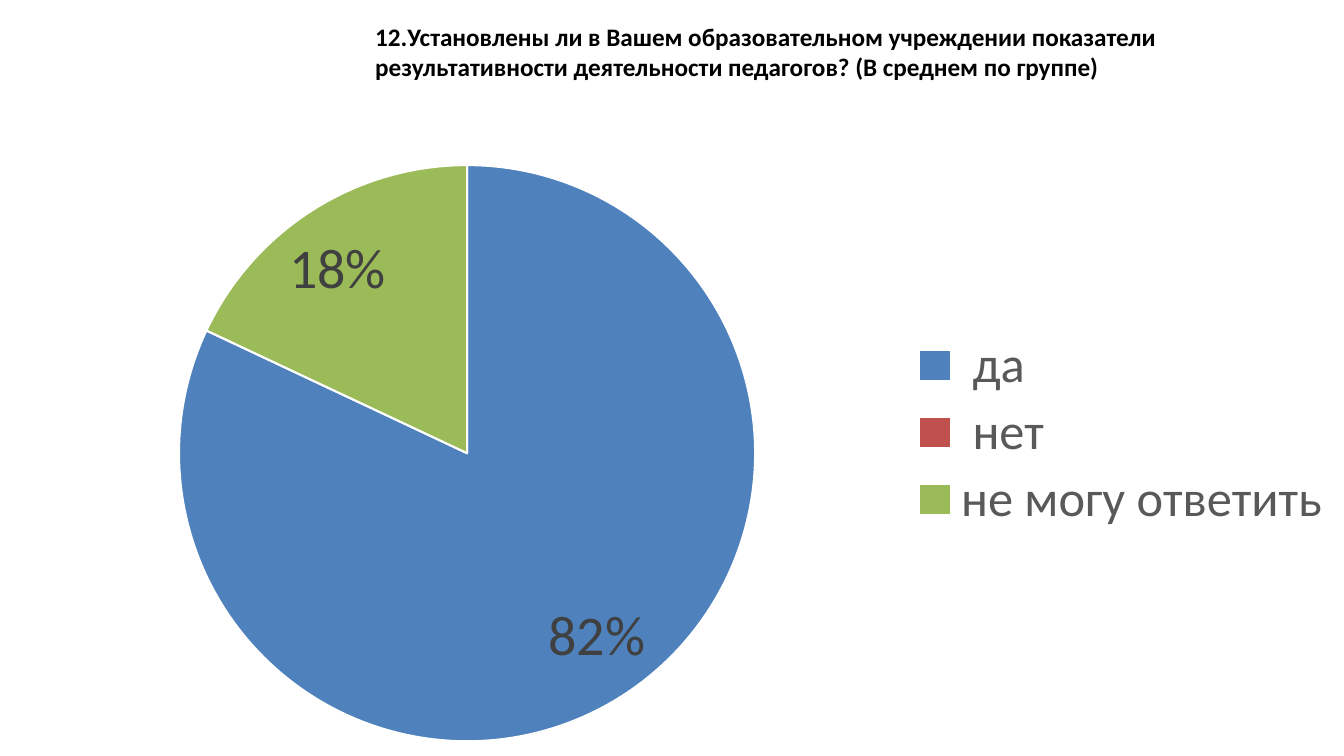
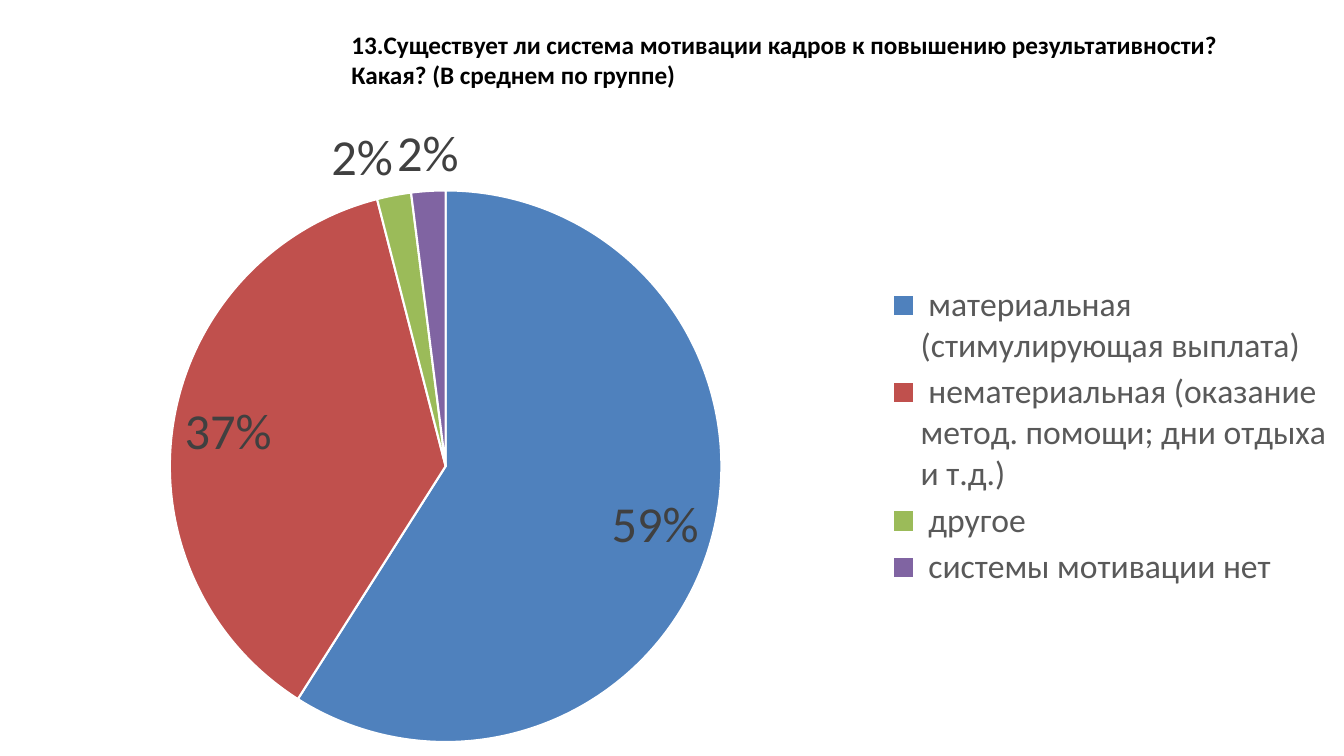
from pptx import Presentation
from pptx.chart.data import CategoryChartData
from pptx.dml.color import RGBColor
from pptx.enum.chart import XL_CHART_TYPE, XL_LABEL_POSITION, XL_LEGEND_POSITION
from pptx.enum.text import MSO_ANCHOR, MSO_AUTO_SIZE, PP_ALIGN
from pptx.oxml import parse_xml
from pptx.oxml.ns import nsdecls, qn
from pptx.util import Cm, Pt

FONT = "Calibri"
WIDTH, HEIGHT = 33.87, 19.05
COLORS = {
    "title": "000000",
    "legend": "595959",
    "label": "404040",
    "border": "FFFFFF",
    "blue": "4F81BD",
    "red": "C0504D",
    "green": "9BBB59",
    "purple": "8064A2",
}
SLICES = ["blue", "red", "green", "purple"]

QUESTIONS = [
    {
        "title": "12.Установлены ли в Вашем образовательном учреждении показатели "
                 "результативности деятельности педагогов? (В среднем по группе)",
        "title_box": (9.2, 0.4, 24, 2.57),
        "answers": {" да": 82, " нет": 0, "не могу ответить": 18},
        "chart_top": 2.51,
        "pie_box": (4.51, 4.16, 14.52, 14.52),
        "legend_box": (22.8, 8.3, 10.9, 5.2),
        "legend_size": 36,
        "label_size": 40,
    },
    {
        "title": "13.Существует ли система мотивации кадров к повышению "
                 "результативности? Какая? (В среднем по группе)",
        "title_box": (8.6, 0.6, 22.8, 2.57),
        "answers": {
            " материальная (стимулирующая выплата)": 59,
            " нематериальная (оказание метод. помощи; дни отдыха и т.д.)": 37,
            " другое": 2,
            " системы мотивации нет": 2,
        },
        "chart_top": 2.72,
        "pie_box": (4.28, 4.8, 13.9, 13.9),
        "legend_box": (22.5, 7.05, 11.2, 7.9),
        "legend_size": 24,
        "label_size": 36,
    },
]


def rgb(name):
    return RGBColor.from_string(COLORS[name])


def style_font(font, size, color, bold=False):
    font.name = FONT
    font.size = Pt(size)
    font.bold = bold
    font.color.rgb = rgb(color)


def set_title(page, text, box):
    title = page.shapes.title
    title.left, title.top, title.width, title.height = map(Cm, box)
    frame = title.text_frame
    frame.word_wrap = True
    frame.auto_size = MSO_AUTO_SIZE.NONE
    frame.vertical_anchor = MSO_ANCHOR.TOP
    frame.text = text
    para = frame.paragraphs[0]
    para.alignment = PP_ALIGN.LEFT
    style_font(para.font, 18, "title", bold=True)


def place_part(part, index, box, chart_top, target=""):
    left, top, width, height = box
    chart_height = HEIGHT - chart_top
    fractions = {
        "x": left / WIDTH,
        "y": (top - chart_top) / chart_height,
        "w": width / WIDTH,
        "h": height / chart_height,
    }
    modes = '<c:xMode val="edge"/><c:yMode val="edge"/>'
    sizes = "".join(f'<c:{key} val="{value:.4f}"/>' for key, value in fractions.items())
    for layout in part.findall(qn("c:layout")):
        part.remove(layout)
    part.insert(index, parse_xml(
        f'<c:layout {nsdecls("c")}><c:manualLayout>{target}{modes}{sizes}'
        "</c:manualLayout></c:layout>"))


def style_slices(plot, count):
    plot.vary_by_categories = True
    for index, name in enumerate(SLICES[:count]):
        slice_format = plot.series[0].points[index].format
        slice_format.fill.solid()
        slice_format.fill.fore_color.rgb = rgb(name)
        slice_format.line.color.rgb = rgb("border")
        slice_format.line.width = Pt(1.5)


def style_labels(plot, size):
    plot.has_data_labels = True
    labels = plot.data_labels
    labels.show_value = False
    labels.show_percentage = True
    labels.number_format = "0%"
    labels.number_format_is_linked = False
    labels.position = XL_LABEL_POSITION.BEST_FIT
    style_font(labels.font, size, "label")


def add_pie(page, question):
    answers, top = question["answers"], question["chart_top"]
    data = CategoryChartData()
    data.categories = list(answers)
    data.add_series("Series 1", list(answers.values()))
    chart = page.shapes.add_chart(
        XL_CHART_TYPE.PIE, 0, Cm(top), Cm(WIDTH), Cm(HEIGHT - top), data).chart
    chart.has_title = False
    style_font(chart.font, 10, "title")
    plot = chart.plots[0]
    style_slices(plot, len(answers))
    style_labels(plot, question["label_size"])
    chart.has_legend = True
    legend = chart.legend
    legend.position = XL_LEGEND_POSITION.RIGHT
    legend.include_in_layout = False
    style_font(legend.font, question["legend_size"], "legend")
    plot_area = chart.element.find(".//" + qn("c:plotArea"))
    legend_part = chart.element.find(".//" + qn("c:legend"))
    place_part(plot_area, 0, question["pie_box"], top,
               '<c:layoutTarget val="inner"/>')
    place_part(legend_part, 1, question["legend_box"], top)


def main():
    deck = Presentation()
    deck.slide_width, deck.slide_height = Cm(WIDTH), Cm(HEIGHT)
    title_only = deck.slide_layouts[5]
    for question in QUESTIONS:
        page = deck.slides.add_slide(title_only)
        set_title(page, question["title"], question["title_box"])
        add_pie(page, question)
    deck.save("out.pptx")


if __name__ == "__main__":
    main()
